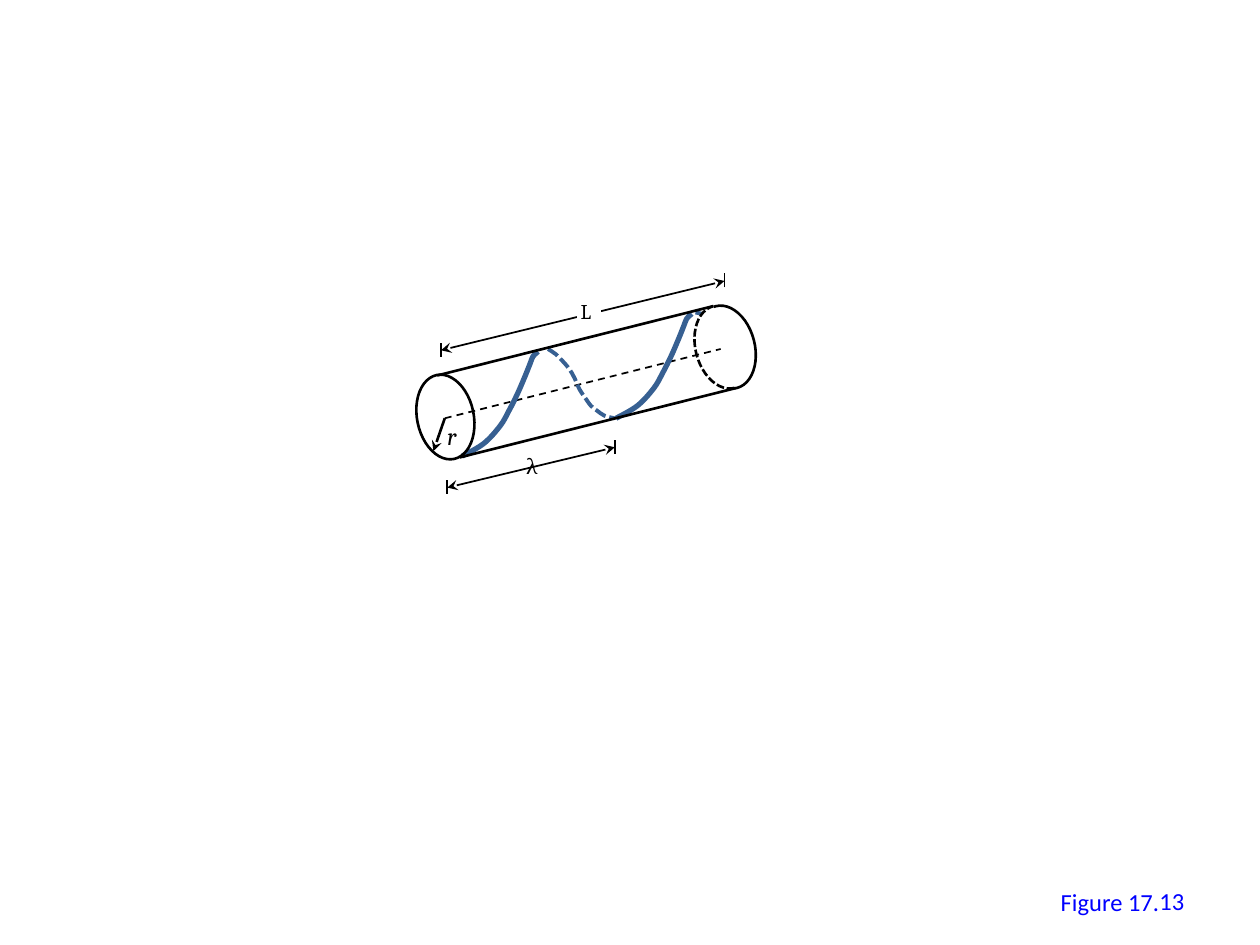
import pptx
import pptx.dml.color
import pptx.enum.dml
import pptx.enum.shapes
import pptx.enum.text
import pptx.oxml
import pptx.oxml.ns
import pptx.util

PX = 9144
BLACK, WHITE, HELIX, CAPTION = "000000", "FFFFFF", "376092", "0000FF"
DASH = pptx.enum.dml.MSO_LINE.DASH
SHORT_DASH = pptx.enum.dml.MSO_LINE.SQUARE_DOT
SHAPE = pptx.enum.shapes.MSO_SHAPE
AUTO_SIZE = pptx.enum.text.MSO_AUTO_SIZE
NAMESPACE = pptx.oxml.ns.nsdecls("a")

RISE = [(0, 83), (17, 73), (30, 59), (37, 47), (44, 33),
        (50, 19), (54, 9), (56, 4), (59, 1), (60, 0)]
FALL = [(0, 0), (6, 4), (12, 10), (17, 16), (21, 23), (25, 32),
        (29, 38), (34, 45), (39, 49), (45, 53), (53, 55)]


def color(hex_string):
    """Return the colour for a hex string."""
    return pptx.dml.color.RGBColor.from_string(hex_string)


def emu(*lengths):
    """Turn px lengths into EMU."""
    return [round(length * PX) for length in lengths]


def style_line(line, hex_string, width, dash=None):
    """Set the colour, width and dash of a line."""
    line.color.rgb = color(hex_string)
    line.width = pptx.util.Pt(width)
    if dash:
        line.dash_style = dash


def add_line(slide, start, end, hex_string=BLACK, width=1, dash=None, arrows=()):
    """Draw a straight line with stealth arrowheads at the named ends."""
    connector = slide.shapes.add_connector(
        pptx.enum.shapes.MSO_CONNECTOR.STRAIGHT, *emu(*start, *end))
    style_line(connector.line, hex_string, width, dash)
    properties = connector._element.spPr
    outline = properties.find(pptx.oxml.ns.qn("a:ln"))
    for arrow in arrows:
        outline.append(pptx.oxml.parse_xml(f'<a:{arrow} {NAMESPACE} type="stealth"/>'))
    properties.append(pptx.oxml.parse_xml(f"<a:effectLst {NAMESPACE}/>"))


def add_outline(slide, preset, box, rotation, dash=None, angles=()):
    """Draw an unfilled, rotated preset shape."""
    outline = slide.shapes.add_shape(preset, *emu(*box))
    outline.shadow.inherit = False
    outline.rotation = rotation
    outline.fill.background()
    style_line(outline.line, BLACK, 1.5, dash)
    for index, angle in enumerate(angles):
        outline.adjustments[index] = angle


def round_segments(curve, knots):
    """Replace the straight segments between knots by smooth Bezier ones."""
    padded = [knots[0], *knots, knots[-1]]
    segments = list(curve._element.iter(pptx.oxml.ns.qn("a:lnTo")))
    for segment, a, b, c, d in zip(segments, padded, padded[1:], padded[2:], padded[3:]):
        leaving = [q + (r - p) / 6 for p, q, r in zip(a, b, c)]
        arriving = [r - (s - q) / 6 for q, r, s in zip(b, c, d)]
        points = "".join('<a:pt x="{}" y="{}"/>'.format(*emu(*point))
                         for point in (leaving, arriving, c))
        segment.getparent().replace(segment, pptx.oxml.parse_xml(
            f"<a:cubicBezTo {NAMESPACE}>{points}</a:cubicBezTo>"))


def add_curve(slide, left, top, knots, width, dash=None):
    """Draw one half turn of the helix."""
    points = [emu(left + x, top + y) for x, y in knots]
    builder = slide.shapes.build_freeform(*points[0], scale=1.0)
    builder.add_line_segments(points[1:], close=False)
    curve = builder.convert_to_shape()
    round_segments(curve, knots)
    curve.shadow.inherit = False
    curve.fill.background()
    style_line(curve.line, HELIX, width, dash)


def format_text(frame, size, font, hex_string, italic=False):
    """Format the runs of a text frame."""
    for run in frame.paragraphs[0].runs:
        run.font.size = pptx.util.Pt(size)
        run.font.name = font
        run.font.italic = italic
        run.font.color.rgb = color(hex_string)


def add_label(slide, box, text, size=12, font="Cambria", hex_string=BLACK, italic=False):
    """Add a text label that fits its wording."""
    label = slide.shapes.add_textbox(*emu(*box))
    label.text_frame.text = text
    label.text_frame.word_wrap = False
    label.text_frame.auto_size = AUTO_SIZE.SHAPE_TO_FIT_TEXT
    format_text(label.text_frame, size, font, hex_string, italic)


def draw_cylinder(slide, left, top):
    """Draw the cylinder with its axis and helix."""
    def at(x, y):
        return left + x, top + y

    add_line(slide, at(22, 90), at(241, 35), dash=DASH)
    add_line(slide, at(221, 6), at(226, 7), HELIX, 2.25)
    add_curve(slide, *at(158, 7), RISE, 3)
    add_curve(slide, *at(104, 35), FALL, 2.25, SHORT_DASH)
    add_curve(slide, *at(36, 37), RISE, 3)
    add_outline(slide, SHAPE.OVAL, (*at(0, 55), 45, 68), 348.4)
    add_outline(slide, SHAPE.ARC, (*at(223, 0), 45, 67), 345.4, angles=(160.3, 55.6))
    add_outline(slide, SHAPE.ARC, (*at(221, 0), 45, 67), 345.4, SHORT_DASH, (54.05, 162.05))
    add_line(slide, at(16, 56), at(235, 1), width=1.5)
    add_line(slide, at(34, 121), at(253, 66), width=1.5)


def draw_dimension(slide, left, top, width, height):
    """Draw a slanted double arrow between two end ticks."""
    right, bottom = left + width, top + height
    add_line(slide, (left, bottom), (right, top), arrows=("headEnd", "tailEnd"))
    for x, y in ((left, bottom), (right, top)):
        add_line(slide, (x, y + 5), (x, y - 6))


def draw_pitch(slide, left, top):
    """Draw the pitch dimension with its label."""
    draw_dimension(slide, left, top, 133, 32)
    add_label(slide, (left + 53, top, 29, 30), "λ")


def draw_length(slide, left, top):
    """Draw the length dimension with its label on a clear gap."""
    draw_dimension(slide, left, top, 225, 55)
    gap = slide.shapes.add_shape(SHAPE.RECTANGLE, *emu(left + 108, top + 19, 19, 15))
    gap.shadow.inherit = False
    gap.fill.solid()
    gap.fill.fore_color.rgb = color(WHITE)
    gap.line.fill.background()
    add_label(slide, (left + 101, top + 9, 30, 30), "L")


def draw_radius(slide, left, top):
    """Draw the radius arrow with its label."""
    add_line(slide, (left + 9, top), (left, top + 26), width=1.5, arrows=("tailEnd",))
    add_label(slide, (left + 1, top - 3, 33, 34), "r", 14, italic=True)


def write_caption(slide, left, top):
    """Write the figure caption and its number."""
    add_label(slide, (left + 115, top + 4, 99, 34), "Figure 17.", 14, "Calibri", CAPTION)
    number = slide.shapes.title
    number.left, number.top, number.width, number.height = emu(left, top, 233, 40)
    frame = number.text_frame
    frame.text = "13"
    frame.auto_size = AUTO_SIZE.NONE
    frame.vertical_anchor = pptx.enum.text.MSO_ANCHOR.MIDDLE
    frame.paragraphs[0].alignment = pptx.enum.text.PP_ALIGN.RIGHT
    format_text(frame, 14, "Calibri", CAPTION)


def main():
    """Build and save the slide."""
    presentation = pptx.Presentation()
    presentation.slide_width, presentation.slide_height = emu(1000, 750)
    slide = presentation.slides.add_slide(presentation.slide_layouts[5])
    draw_cylinder(slide, 331, 242)
    draw_pitch(slide, 355, 355)
    draw_length(slide, 350, 223)
    draw_radius(slide, 344, 332)
    write_caption(slide, 717, 695)
    presentation.save("out.pptx")


if __name__ == "__main__":
    main()
